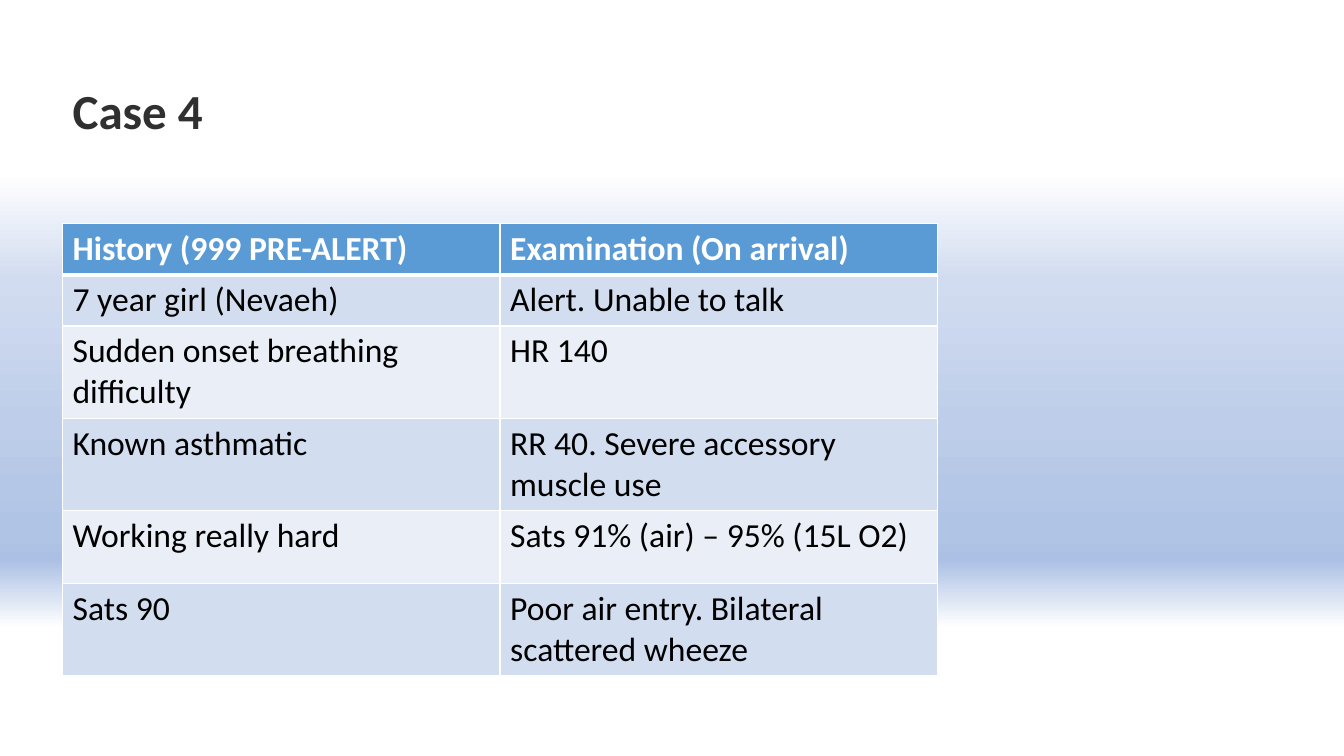
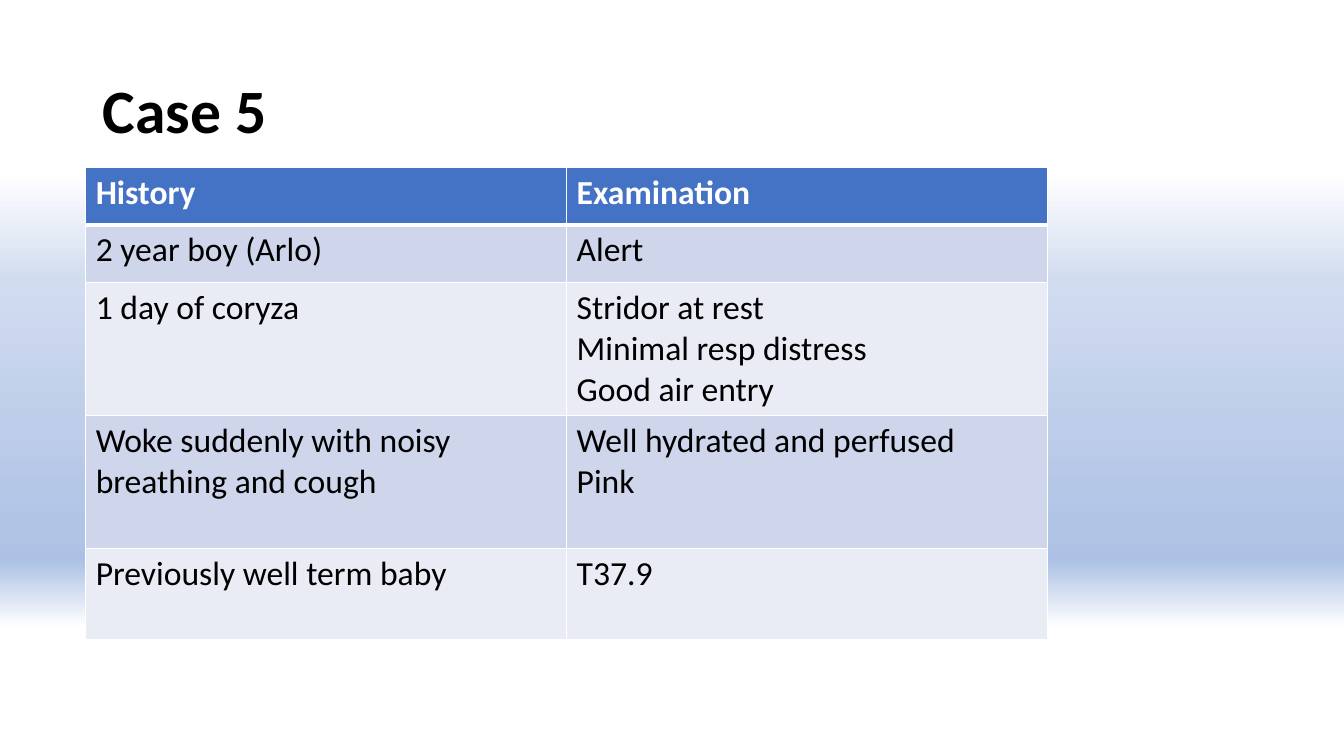
import pptx
import pptx.util
import pptx.dml.color
import pptx.enum.text
import pptx.oxml
import pptx.oxml.ns

Inches = pptx.util.Inches
FONT = "Calibri"
COLOURS = {
    "white": "FFFFFF", "black": "000000", "charcoal": "303030",
    "sky": "5B9BD5", "sky_mid": "D2DEEF", "sky_pale": "EAEFF7",
    "royal": "4472C4", "royal_mid": "CFD5EA", "royal_pale": "E9EBF5",
}
BACKGROUND_STOPS = [
    (23, "FFFFFF"), (37, "D1DCF0"), (56, "BECEEA"), (65, "B5C7E7"), (69, "B0C4E6"),
    (72, "AEC2E5"), (73, "ADC1E5"), (73, "ABC0E4"), (74, "ABC0E4"), (83, "FFFFFF"),
]
CASES = [
    {
        "title": "Case 4",
        "title_box": (0.62, 0.53, 4.67, 1.2),
        "title_format": {"size": 35, "colour": "charcoal"},
        "table_at": (0.62, 2.22),
        "column_width": 4.34,
        "row_heights": [0.42, 0.4, 0.73, 0.73, 0.73, 0.73],
        "palette": "sky",
        "findings": [
            ("History (999 PRE-ALERT)", "Examination (On arrival)"),
            ("7 year girl (Nevaeh)", "Alert. Unable to talk"),
            ("Sudden onset breathing difficulty", "HR 140"),
            ("Known asthmatic", "RR 40. Severe accessory muscle use"),
            ("Working really hard", "Sats 91% (air) – 95% (15L O2)"),
            ("Sats 90", "Poor air entry. Bilateral scattered wheeze"),
        ],
    },
    {
        "title": "Case 5",
        "title_box": (0.92, 0.4, 9.34, 1.45),
        "title_format": {"size": 44, "colour": "black"},
        "table_at": (0.85, 1.66),
        "column_width": 4.77,
        "row_heights": [0.57, 0.57, 1.32, 1.32, 0.91],
        "palette": "royal",
        "findings": [
            ("History", "Examination"),
            ("2 year boy (Arlo)", "Alert"),
            ("1 day of coryza", "Stridor at rest\nMinimal resp distress\nGood air entry"),
            ("Woke suddenly with noisy breathing and cough", "Well hydrated and perfused\nPink"),
            ("Previously well term baby", "T37.9"),
        ],
    },
]


def rgb(name):
    """Return the named palette colour."""
    return pptx.dml.color.RGBColor.from_string(COLOURS[name])


def format_text(text_frame, size, colour, bold=True):
    """Apply one font format to every paragraph of a text frame."""
    values = {"name": FONT, "size": pptx.util.Pt(size), "bold": bold}
    for paragraph in text_frame.paragraphs:
        for attribute, value in values.items():
            setattr(paragraph.font, attribute, value)
        paragraph.font.color.rgb = rgb(colour)


def set_background(master):
    """Give the master a vertical gradient that all slides inherit."""
    fill = master.background.fill
    fill.gradient()
    fill.gradient_angle = 270
    stops = master.element.find(".//" + pptx.oxml.ns.qn("a:gsLst"))
    for stop in list(stops):
        stops.remove(stop)
    for percent, colour in BACKGROUND_STOPS:
        stops.append(pptx.oxml.parse_xml(
            f'<a:gs {pptx.oxml.ns.nsdecls("a")} pos="{percent * 1000}">'
            f'<a:srgbClr val="{colour}"/></a:gs>'))


def add_title(slide, text, box, text_format):
    """Place and format the title placeholder."""
    title = slide.shapes.title
    for attribute, length in zip(("left", "top", "width", "height"), box):
        setattr(title, attribute, Inches(length))
    frame = title.text_frame
    frame.text = text
    frame.auto_size = pptx.enum.text.MSO_AUTO_SIZE.NONE
    frame.vertical_anchor = pptx.enum.text.MSO_ANCHOR.MIDDLE
    heading = frame.paragraphs[0]
    heading.alignment = pptx.enum.text.PP_ALIGN.LEFT
    heading.line_spacing = 0.9
    format_text(frame, **text_format)


def set_borders(cell, top, bottom):
    """Draw white cell borders with the given top and bottom point widths."""
    properties = cell._tc.get_or_add_tcPr()
    for side, width in {"L": 1, "R": 1, "T": top, "B": bottom}.items():
        properties.append(pptx.oxml.parse_xml(
            f'<a:ln{side} {pptx.oxml.ns.nsdecls("a")} w="{pptx.util.Pt(width)}">'
            f'<a:solidFill><a:srgbClr val="{COLOURS["white"]}"/></a:solidFill></a:ln{side}>'))


def fill_cell(cell, text, row, palette):
    """Write a cell and style it by its row: header, odd or even."""
    is_header = row == 0
    cell.text = text
    format_text(cell.text_frame, 24, "white" if is_header else "black", is_header)
    set_borders(cell, top=3 if row == 1 else 1, bottom=3 if is_header else 1)
    shade = "" if is_header else "_mid" if row % 2 else "_pale"
    cell.fill.solid()
    cell.fill.fore_color.rgb = rgb(palette + shade)


def add_findings(slide, at, column_width, row_heights, palette, findings):
    """Add the table of history and examination findings."""
    columns = len(findings[0])
    table = slide.shapes.add_table(
        len(findings), columns, Inches(at[0]), Inches(at[1]),
        Inches(columns * column_width), Inches(sum(row_heights))).table
    for column in table.columns:
        column.width = Inches(column_width)
    for row, (texts, height) in enumerate(zip(findings, row_heights)):
        table.rows[row].height = Inches(height)
        for column, text in enumerate(texts):
            fill_cell(table.cell(row, column), text, row, palette)


def main():
    """Build and save the case slides."""
    deck = pptx.Presentation()
    deck.slide_width, deck.slide_height = Inches(13.33), Inches(7.5)
    set_background(deck.slide_master)
    title_only = deck.slide_layouts.get_by_name("Title Only")
    for case in CASES:
        slide = deck.slides.add_slide(title_only)
        add_title(slide, case["title"], case["title_box"], case["title_format"])
        add_findings(slide, case["table_at"], case["column_width"],
                     case["row_heights"], case["palette"], case["findings"])
    deck.save("out.pptx")


if __name__ == "__main__":
    main()
